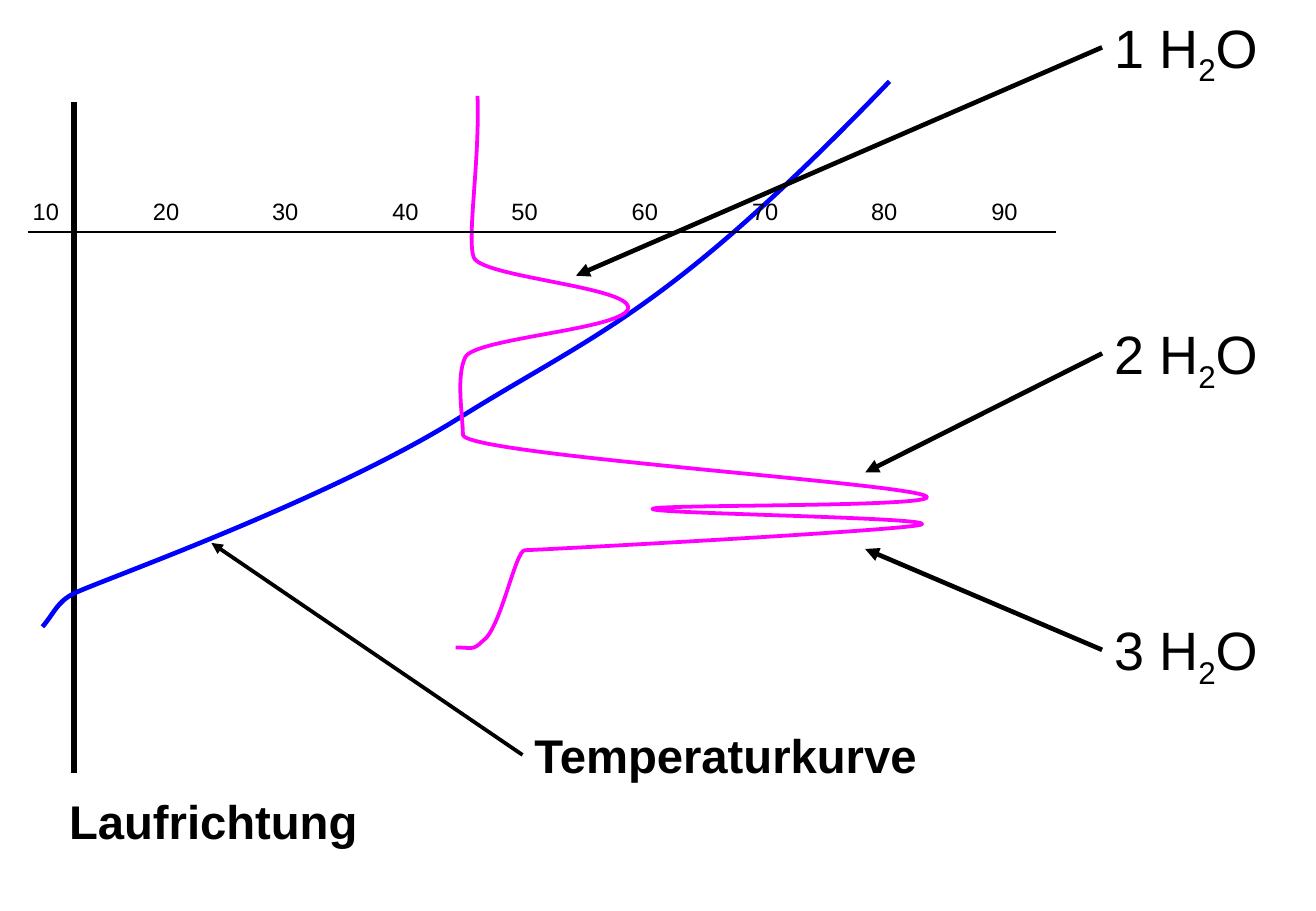
from lxml import etree
from pptx import Presentation
from pptx import util as u
from pptx.dml import color
from pptx.enum import shapes, text
from pptx.oxml import ns

PX = 9144
COLORS = {"ink": "000000", "temperature": "0000FF", "signal": "FF00FF"}
FONT = "Arial"

TEMPERATURE = [
    (35, 516), (45, 504), (47, 496), (60, 489), (74, 481), (266, 414),
    (378, 344), (490, 274), (549, 258), (732, 67),
]
SIGNAL = [
    (393, 79), (395, 133), (384, 197), (390, 212), (396, 228), (516, 236),
    (517, 253), (518, 271), (391, 278), (383, 294), (375, 310), (381, 343),
    (381, 358), (382, 374), (735, 397), (761, 408), (787, 418), (537, 415),
    (537, 419), (536, 423), (775, 426), (758, 432), (740, 437), (440, 453),
    (432, 453), (424, 453), (412, 519), (397, 528), (389, 536), (388, 533),
    (375, 533),
]
WATER_STEPS = [(1, 7, (474, 227)), (2, 259, (712, 389)), (3, 503, (712, 452))]


class Diagram:
    def __init__(self, presentation):
        self.slide = presentation.slides.add_slide(presentation.slide_layouts[6])

    def rgb(self, name):
        return color.RGBColor.from_string(COLORS[name])

    def label(self, content, left, top, width, height, size, bold=False, subscript=()):
        shape = self.slide.shapes.add_textbox(*(v * PX for v in (left, top, width, height)))
        frame = shape.text_frame
        frame.text = content
        frame.word_wrap = False
        frame.auto_size = text.MSO_AUTO_SIZE.SHAPE_TO_FIT_TEXT
        paragraph = frame.paragraphs[0]
        for part in subscript:
            paragraph.add_run().text = part
        for run in paragraph.runs:
            run.font.name = FONT
            run.font.size = u.Pt(size)
            run.font.bold = bold
            run.font.color.rgb = self.rgb("ink")
        if subscript:
            paragraph.runs[1].font._element.set("baseline", "-25000")
        return shape

    def line(self, start, end, weight):
        connector = self.slide.shapes.add_connector(
            shapes.MSO_CONNECTOR.STRAIGHT, *(v * PX for v in start + end))
        connector.line.color.rgb = self.rgb("ink")
        connector.line.width = u.Pt(weight)
        etree.SubElement(connector._element.spPr, ns.qn("a:effectLst"))
        return connector

    def arrow_from(self, label, end, weight):
        connector = self.line((0, 0), end, weight)
        connector.begin_connect(label, 1)
        outline = connector.line._get_or_add_ln()
        etree.SubElement(outline, ns.qn("a:tailEnd"), type="triangle")

    def curve(self, controls, color_name, weight):
        anchors = controls[::3]
        left, top = (min(values) for values in zip(*anchors))
        builder = self.slide.shapes.build_freeform(*anchors[0], scale=PX)
        builder.add_line_segments(anchors[1:], close=False)
        shape = builder.convert_to_shape()
        segments = list(shape._element.iter(ns.qn("a:lnTo")))
        for i, segment in enumerate(segments):
            bezier = etree.Element(ns.qn("a:cubicBezTo"))
            for x, y in controls[3 * i + 1:3 * i + 4]:
                etree.SubElement(bezier, ns.qn("a:pt"), x=str(x - left), y=str(y - top))
            segment.getparent().replace(segment, bezier)
        shape.shadow.inherit = False
        shape.fill.background()
        shape.line.color.rgb = self.rgb(color_name)
        shape.line.width = u.Pt(weight)


def main():
    presentation = Presentation()
    presentation.slide_width = 1083 * PX
    presentation.slide_height = 750 * PX
    diagram = Diagram(presentation)

    diagram.line((61, 84), (61, 636), 3.25)
    diagram.label("Laufrichtung", 47, 647, 261, 57, 28, bold=True)

    diagram.curve(TEMPERATURE, "temperature", 2.75)
    temperature_label = diagram.label("Temperaturkurve", 430, 593, 339, 57, 28, bold=True)
    diagram.arrow_from(temperature_label, (174, 447), 2.25)

    diagram.curve(SIGNAL, "signal", 2.25)
    for count, top, target in WATER_STEPS:
        water_label = diagram.label(f"{count} H", 907, top, 142, 64, 32, subscript=("2", "O"))
        diagram.arrow_from(water_label, target, 2.75)

    diagram.line((23, 191), (869, 191), 1.75)
    for i in range(9):
        diagram.label(str(10 * (i + 1)), 17 + round(98.6 * i), 157, 42, 34, 14)

    presentation.save("out.pptx")


if __name__ == "__main__":
    main()
